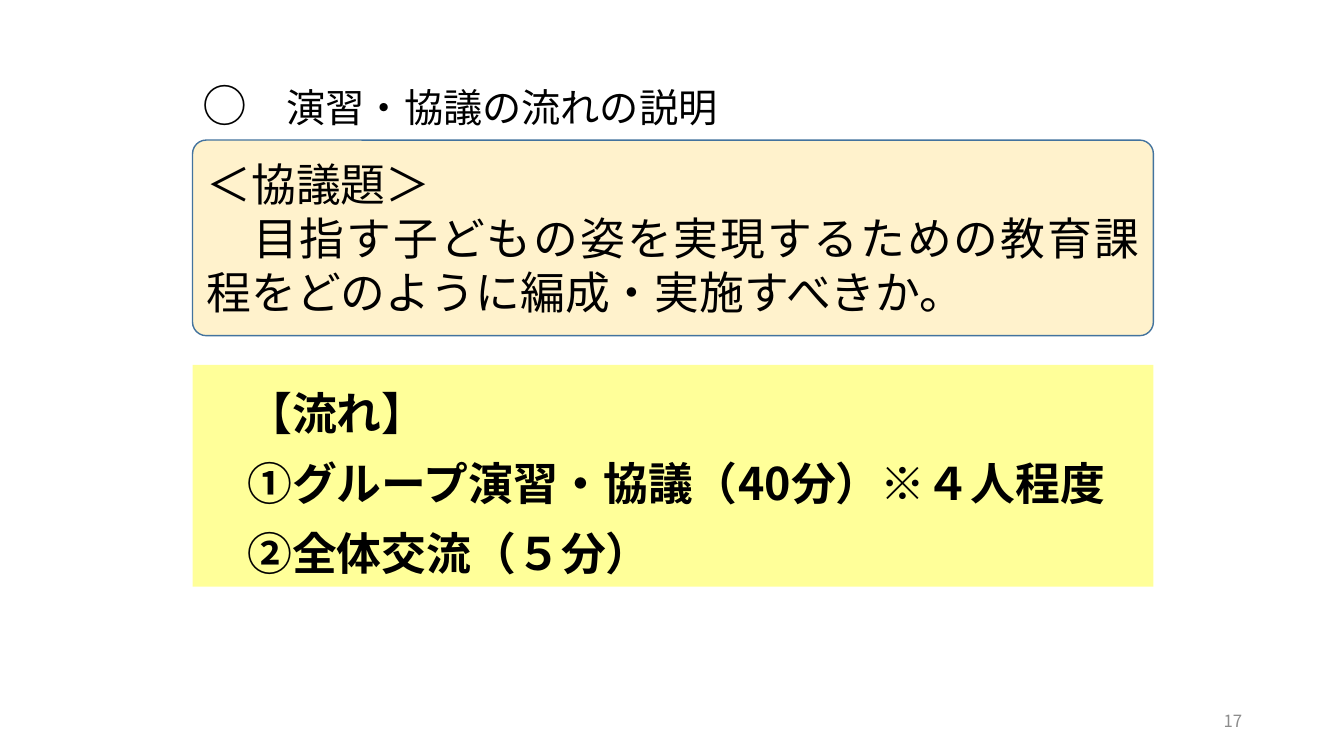
from lxml import etree
from pptx import Presentation
from pptx.dml.color import RGBColor
from pptx.enum.lang import MSO_LANGUAGE_ID
from pptx.enum.shapes import MSO_SHAPE
from pptx.enum.text import MSO_ANCHOR, MSO_AUTO_SIZE, PP_ALIGN
from pptx.oxml.ns import qn
from pptx.util import Inches, Pt

FONT = "Noto Sans CJK JP"
JUSTIFY, LEFT, RIGHT = PP_ALIGN.JUSTIFY, PP_ALIGN.LEFT, PP_ALIGN.RIGHT
TOP, MIDDLE = MSO_ANCHOR.TOP, MSO_ANCHOR.MIDDLE
JAPANESE = MSO_LANGUAGE_ID.JAPANESE
PANEL_LEFT, PANEL_WIDTH = 1.91, 9.53


def rgb(hex_color):
    return RGBColor.from_string(hex_color)


def format_text(frame, size, align, anchor, color="000000", bold=False, spacing=None):
    frame.word_wrap = True
    frame.vertical_anchor = anchor
    for paragraph in frame.paragraphs:
        paragraph.alignment = align
        paragraph.line_spacing = spacing
        for run in paragraph.runs:
            font = run.font
            font.size, font.bold, font.name = Pt(size), bold, FONT
            font.color.rgb = rgb(color)
            font.language_id = JAPANESE
            etree.SubElement(run._r.rPr, qn("a:ea"), typeface=FONT)


prs = Presentation()
prs.slide_width, prs.slide_height = Inches(13.33), Inches(7.5)
slide = prs.slides.add_slide(prs.slide_layouts[5])

# Heading
heading = slide.shapes.title
heading.left, heading.top = Inches(PANEL_LEFT), Inches(0.89)
heading.width, heading.height = Inches(9.76), Inches(0.67)
heading.text_frame.auto_size = MSO_AUTO_SIZE.NONE
line = heading.text_frame.paragraphs[0]
for part in ("○", "\u3000演習・協議の流れの説明".replace("\u3000", "　")):
    line.add_run().text = part
format_text(heading.text_frame, 28, JUSTIFY, TOP, spacing=Pt(26))
line.runs[0].font.size = Pt(32)

# Discussion topic and schedule panels
panels = [
    (MSO_SHAPE.ROUNDED_RECTANGLE, 1.39, 1.94, "FFF2CC",
     ["＜協議題＞",
      "　目指す子どもの姿を実現するための教育課程をどのように編成・実施すべきか。"],
     dict(align=JUSTIFY, anchor=MIDDLE)),
    (MSO_SHAPE.RECTANGLE, 3.62, 2.2, "FFFF99",
     ["　【流れ】", "　①グループ演習・協議（40分）※４人程度", "　②全体交流（５分）"],
     dict(align=LEFT, anchor=TOP, bold=True, spacing=Pt(50))),
]
for outline, top, height, fill, lines, style in panels:
    panel = slide.shapes.add_shape(outline, Inches(PANEL_LEFT), Inches(top),
                                   Inches(PANEL_WIDTH), Inches(height))
    panel.shadow.inherit = False
    panel.fill.solid()
    panel.fill.fore_color.rgb = rgb(fill)
    if outline == MSO_SHAPE.ROUNDED_RECTANGLE:
        panel.adjustments[0] = 0.07
        panel.line.color.rgb = rgb("43739E")
        panel.line.width = Pt(1)
    else:
        panel.line.fill.background()
    panel.text_frame.text = "\n".join(lines)
    format_text(panel.text_frame, 32, **style)

# Slide number
page_number = slide.shapes.add_textbox(Inches(9.42), Inches(6.95), Inches(3), Inches(0.4))
page_number.text_frame.text = "17"
format_text(page_number.text_frame, 12, RIGHT, MIDDLE, color="8C8C8C")

prs.save("out.pptx")
